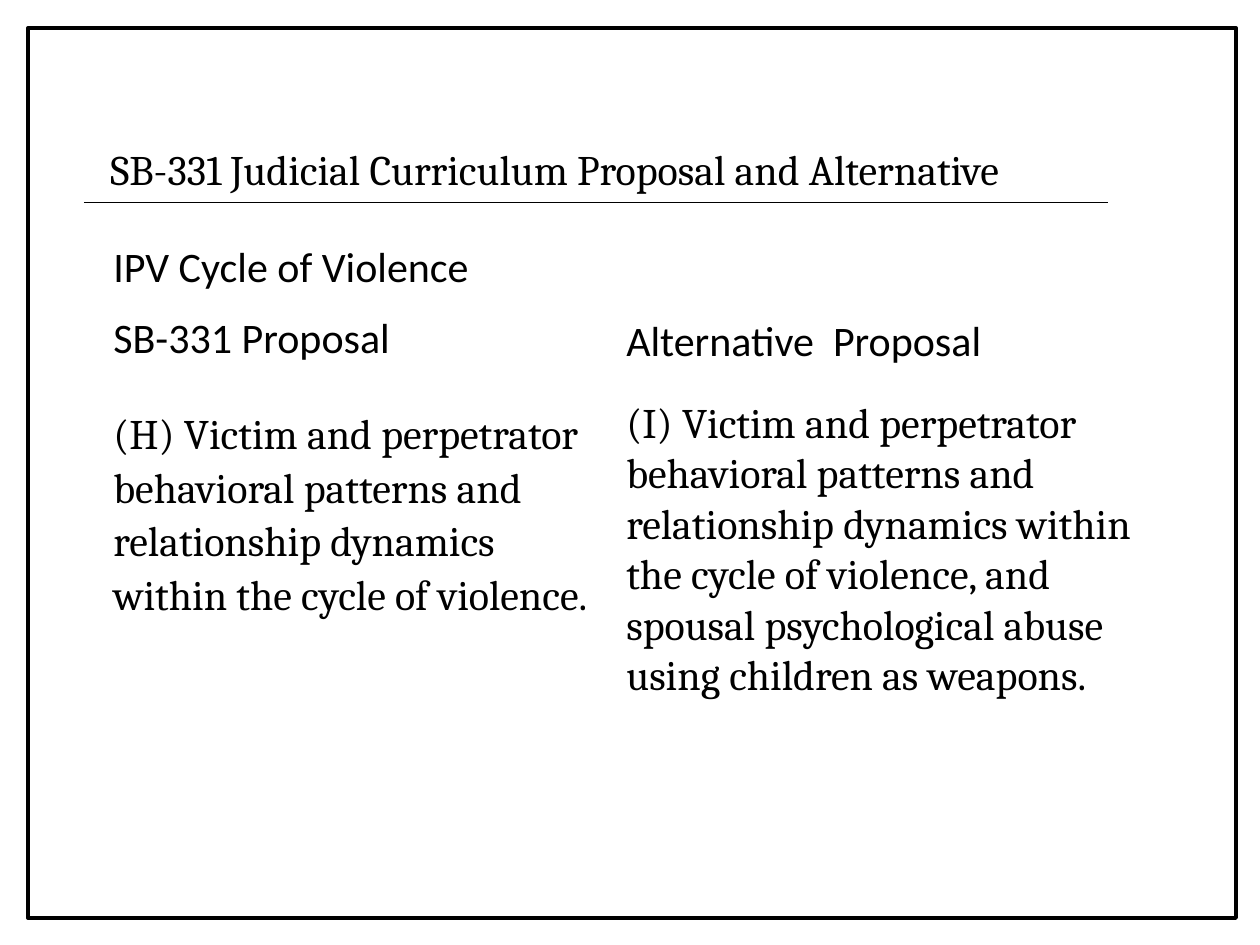
"""Build the SB-331 curriculum comparison slide."""
from lxml.etree import SubElement
from pptx import Presentation
from pptx.dml.color import RGBColor
from pptx.enum.shapes import MSO_CONNECTOR as Connector, MSO_SHAPE as Shape
from pptx.enum.text import MSO_AUTO_SIZE as AutoSize
from pptx.oxml.ns import qn
from pptx.util import Emu, Pt

COLORS = {"ink": "000000", "paper": "FFFFFF"}
HEADING, BODY = "Calibri", "Cambria"
SLIDE = (1260, 945)
FRAME = (28, 28, 1208, 890)
RULE = (84, 202, 1108, 202)

TEXTS = [
    ((98, 134, 1032, 64), [
        ("SB-331 Judicial Curriculum Proposal and Alternative",
         dict(font=BODY, spacing=1.07, after=6)),
    ]),
    ((101, 305, 513, 375), [
        ("SB-331 Proposal", dict(font=HEADING, after=18)),
        ("(H) Victim and perpetrator behavioral patterns and relationship "
         "dynamics within the cycle of violence.",
         dict(font=BODY, spacing=1.07, before=6, after=18)),
    ]),
    ((614, 305, 580, 404), [
        ("Alternative  Proposal", dict(font=HEADING, spacing=1.07)),
        ("(I) Victim and perpetrator behavioral patterns and relationship "
         "dynamics within the cycle of violence, and spousal psychological "
         "abuse using children as weapons.",
         dict(font=BODY, before=18)),
    ]),
    ((101, 234, 609, 63), [("IPV Cycle of Violence", dict(font=HEADING))]),
]


def px(*lengths):
    return [Emu(round(length * 914400 / 126)) for length in lengths]


def color(name):
    return RGBColor.from_string(COLORS[name])


def write(paragraph, text, *, font, size=24, spacing=1.0, before=0, after=0):
    paragraph.line_spacing = spacing
    paragraph.space_before = Pt(before)
    paragraph.space_after = Pt(after)
    run = paragraph.add_run()
    run.text = text
    run.font.name = font
    run.font.size = Pt(size)
    run.font.color.rgb = color("ink")


def add_text(slide, place, paragraphs):
    frame = slide.shapes.add_textbox(*px(*place)).text_frame
    frame.word_wrap = True
    frame.auto_size = AutoSize.SHAPE_TO_FIT_TEXT
    for index, (text, style) in enumerate(paragraphs):
        paragraph = frame.add_paragraph() if index else frame.paragraphs[0]
        write(paragraph, text, **style)


def draw_line(line, width):
    line.color.rgb = color("ink")
    line.width = Pt(width)


def main():
    deck = Presentation()
    deck.slide_width, deck.slide_height = px(*SLIDE)
    slide = deck.slides.add_slide(deck.slide_layouts[6])
    slide.background.fill.solid()
    slide.background.fill.fore_color.rgb = color("paper")

    for place, paragraphs in TEXTS:
        add_text(slide, place, paragraphs)

    rule = slide.shapes.add_connector(Connector.STRAIGHT, *px(*RULE))
    draw_line(rule.line, 0.5)
    SubElement(rule._element.spPr, qn("a:effectLst"))

    border = slide.shapes.add_shape(Shape.RECTANGLE, *px(*FRAME))
    border.shadow.inherit = False
    border.fill.background()
    draw_line(border.line, 2.25)

    deck.save("out.pptx")


if __name__ == "__main__":
    main()
